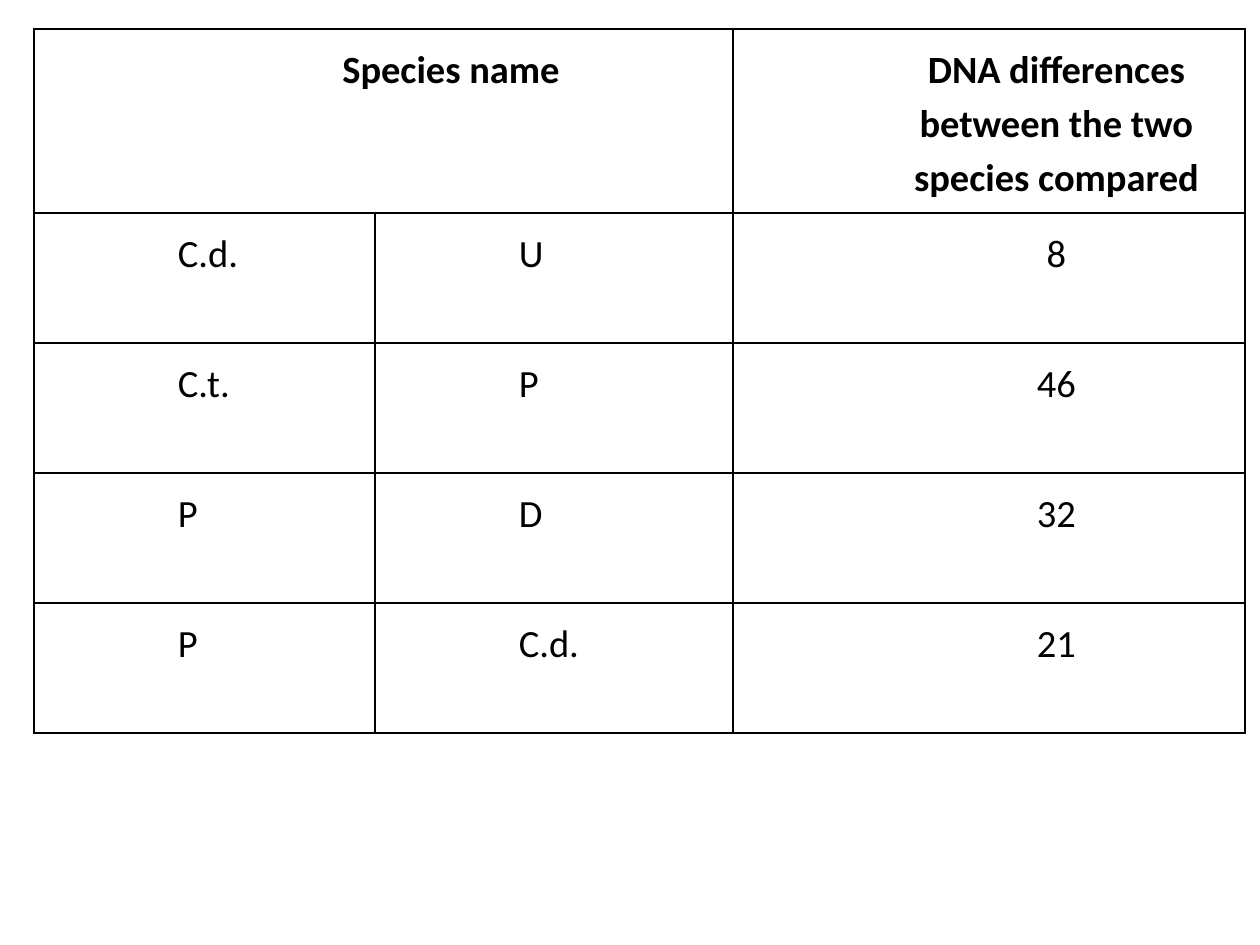
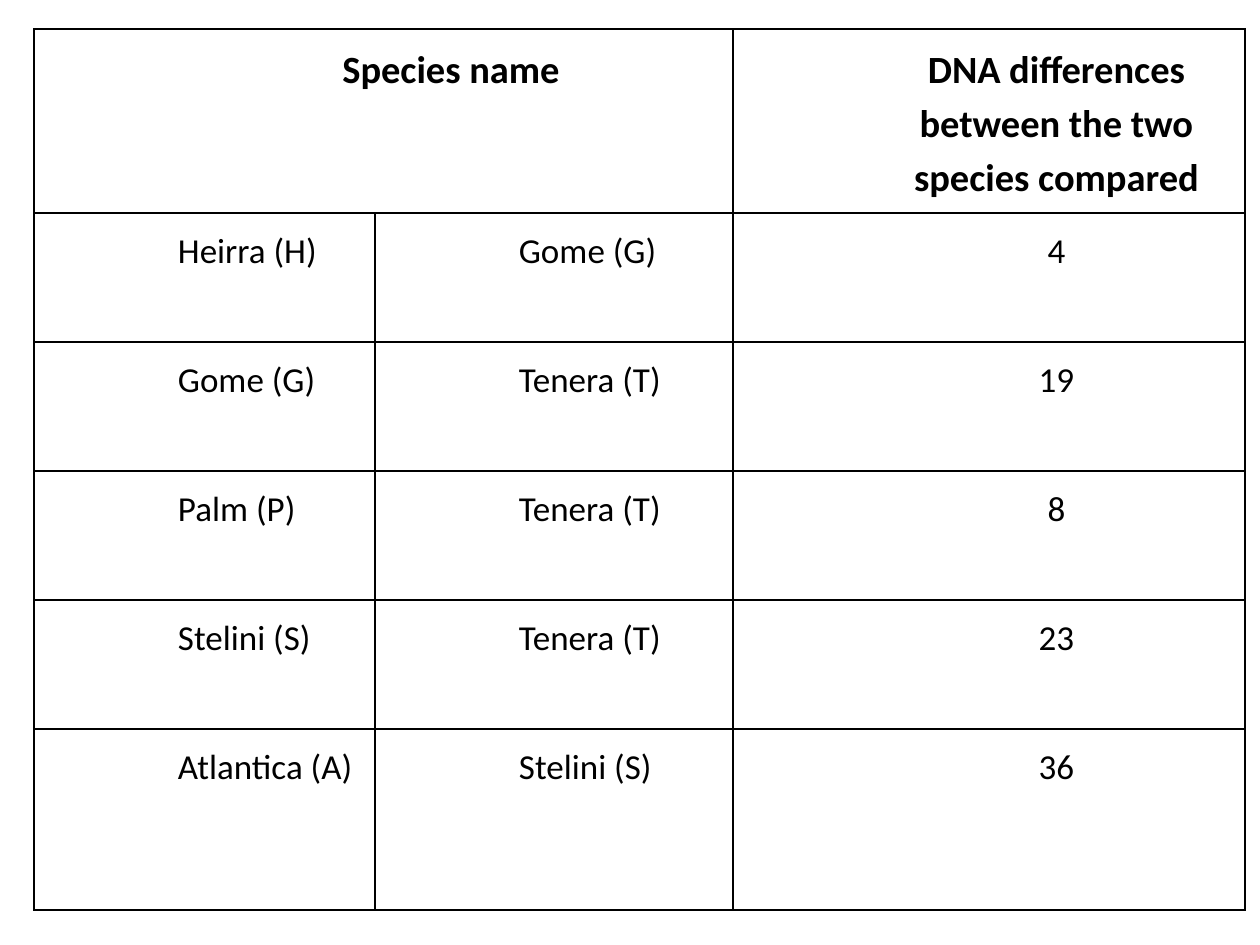
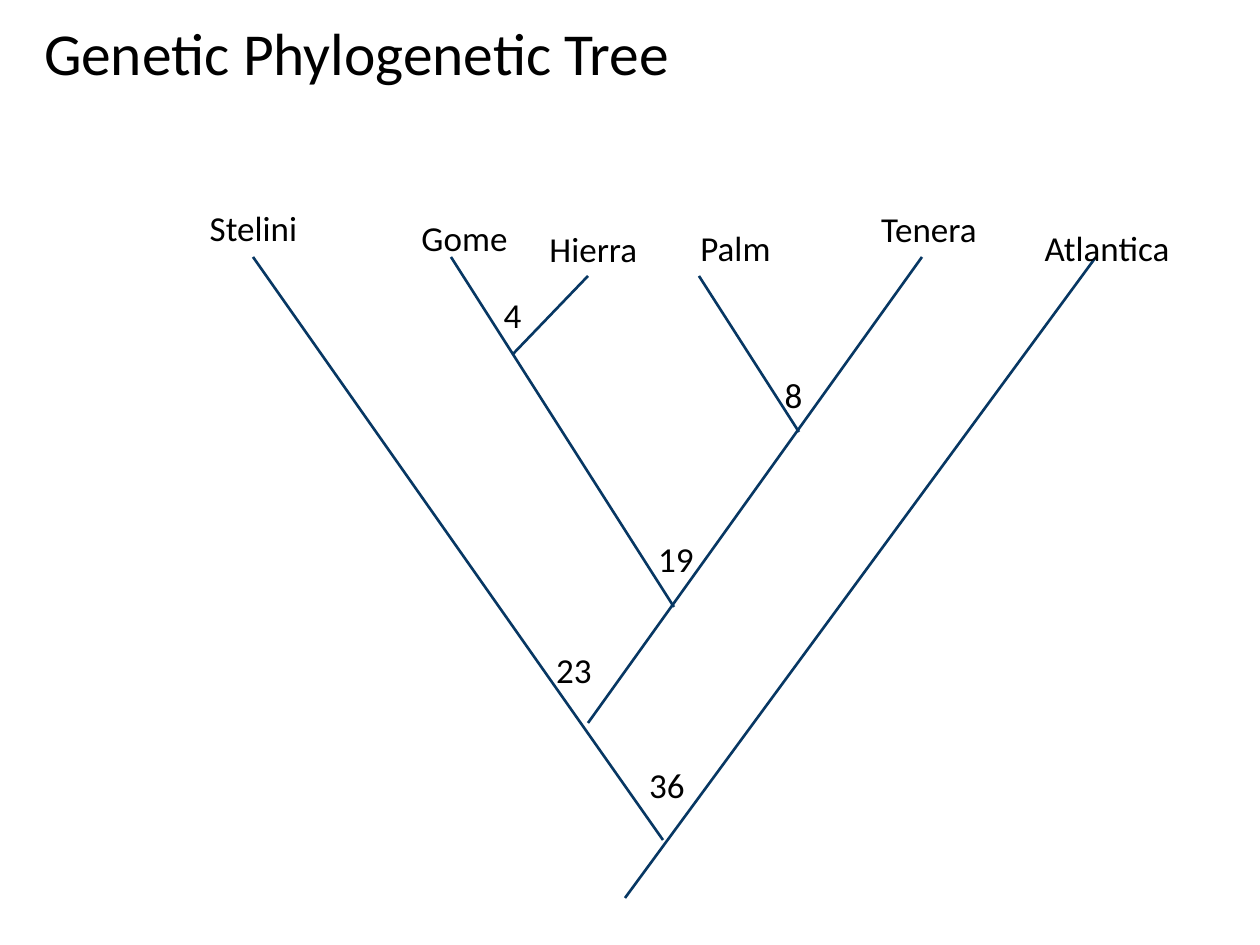
from lxml.etree import SubElement
from pptx import Presentation
from pptx.dml.color import RGBColor
from pptx.enum.shapes import MSO_CONNECTOR
from pptx.enum.text import MSO_ANCHOR, PP_ALIGN
from pptx.oxml.ns import qn
from pptx.util import Emu, Pt

COLORS = {"ink": "000000", "branch": "073763"}
FONT = "Calibri"
EMU_PER_PX = 914400 / 126


def px(n):
    return Emu(round(n * EMU_PER_PX))


def write(tf, text, size, align, inset, bold=False):
    tf.word_wrap = True
    tf.margin_left = tf.margin_right = px(inset[0])
    tf.margin_top = tf.margin_bottom = px(inset[1])
    p = tf.paragraphs[0]
    p.alignment = align
    r = p.add_run()
    r.text = text
    r.font.name = FONT
    r.font.size = Pt(size)
    r.font.bold = bold
    r.font.color.rgb = RGBColor.from_string(COLORS["ink"])
    return p


prs = Presentation()
prs.slide_width, prs.slide_height = px(1260), px(945)
blank = prs.slide_layouts[6]

# Slides 1 and 2: DNA comparison tables
header = ("Species name", "", "DNA differences between the two species compared")
col_widths = (341, 358, 512)
comparisons = [
    {"size": 22, "heights": (184, 130, 130, 130, 130),
     "rows": [("C.d.", "U", "8"), ("C.t.", "P", "46"),
              ("P", "D", "32"), ("P", "C.d.", "21")]},
    {"size": 20, "heights": (184, 129, 129, 129, 129, 181),
     "rows": [("Heirra (H)", "Gome (G)", "4"), ("Gome (G)", "Tenera (T)", "19"),
              ("Palm (P)", "Tenera (T)", "8"), ("Stelini (S)", "Tenera (T)", "23"),
              ("Atlantica (A)", "Stelini (S)", "36")]},
]

for comparison in comparisons:
    s = prs.slides.add_slide(blank)
    rows = [header] + comparison["rows"]
    heights = comparison["heights"]
    table = s.shapes.add_table(len(rows), 3, px(34), px(29),
                               px(sum(col_widths)), px(sum(heights))).table
    table.first_row = table.horz_banding = False
    for col, width in zip(table.columns, col_widths):
        col.width = px(width)
    for row, height in zip(table.rows, heights):
        row.height = px(height)
    table.cell(0, 0).merge(table.cell(0, 1))

    for i, values in enumerate(rows):
        for j, value in enumerate(values):
            cell = table.cell(i, j)
            # Borders come before the fill in the cell properties
            tc_pr = cell._tc.get_or_add_tcPr()
            for side in ("a:lnL", "a:lnR", "a:lnT", "a:lnB"):
                ln = SubElement(tc_pr, qn(side), w=str(Pt(1)))
                fill = SubElement(ln, qn("a:solidFill"))
                SubElement(fill, qn("a:srgbClr"), val=COLORS["ink"])
            cell.fill.background()
            cell.margin_left = cell.margin_right = px(9)
            cell.margin_top = cell.margin_bottom = px(11)
            if not value:
                continue
            centred = i == 0 or j == 2
            p = write(cell.text_frame, value, 22 if i == 0 else comparison["size"],
                      PP_ALIGN.CENTER if centred else PP_ALIGN.LEFT, (9, 11), i == 0)
            p.line_spacing = 1.15
            p_pr = p._p.get_or_add_pPr()
            p_pr.set("marL", str(px(135)))
            p_pr.set("indent", "0")

# Slide 3: phylogenetic tree
s = prs.slides.add_slide(blank)
tree = s.shapes.add_group_shape()

# Branches: x1, y1, x2, y2
branches = [
    (253, 257, 663, 840),
    (625, 898, 1096, 257),
    (588, 723, 922, 257),
    (674, 607, 451, 257),
    (513, 354, 588, 276),
    (799, 432, 699, 276),
]
for ends in branches:
    line = tree.shapes.add_connector(MSO_CONNECTOR.STRAIGHT, *map(px, ends))
    line.line.color.rgb = RGBColor.from_string(COLORS["branch"])
    line.line.width = Pt(1.5)
    SubElement(line._element.spPr, qn("a:effectLst"))

# Species names and difference counts: text, left, top, width, height
labels = [
    ("Stelini", 179, 179, 149, 97),
    ("Atlantica", 1017, 209, 180, 78),
    ("Tenera", 861, 199, 136, 58),
    ("Gome", 353, 179, 223, 117),
    ("Palm", 674, 218, 123, 58),
    ("Hierra", 525, 219, 137, 58),
    ("36", 630, 746, 74, 78),
    ("23", 525, 640, 98, 58),
    ("19", 638, 529, 76, 58),
    ("8", 750, 355, 87, 79),
    ("4", 488, 276, 49, 78),
]
for text, *box in labels:
    sp = tree.shapes.add_textbox(*map(px, box))
    sp.text_frame.vertical_anchor = MSO_ANCHOR.MIDDLE
    write(sp.text_frame, text, 20, PP_ALIGN.CENTER, (13, 13))

# Title
sp = s.shapes.add_textbox(px(39), px(11), px(1201), px(141))
write(sp.text_frame, "Genetic Phylogenetic Tree", 34, PP_ALIGN.LEFT, (5, 5))

prs.save("out.pptx")
